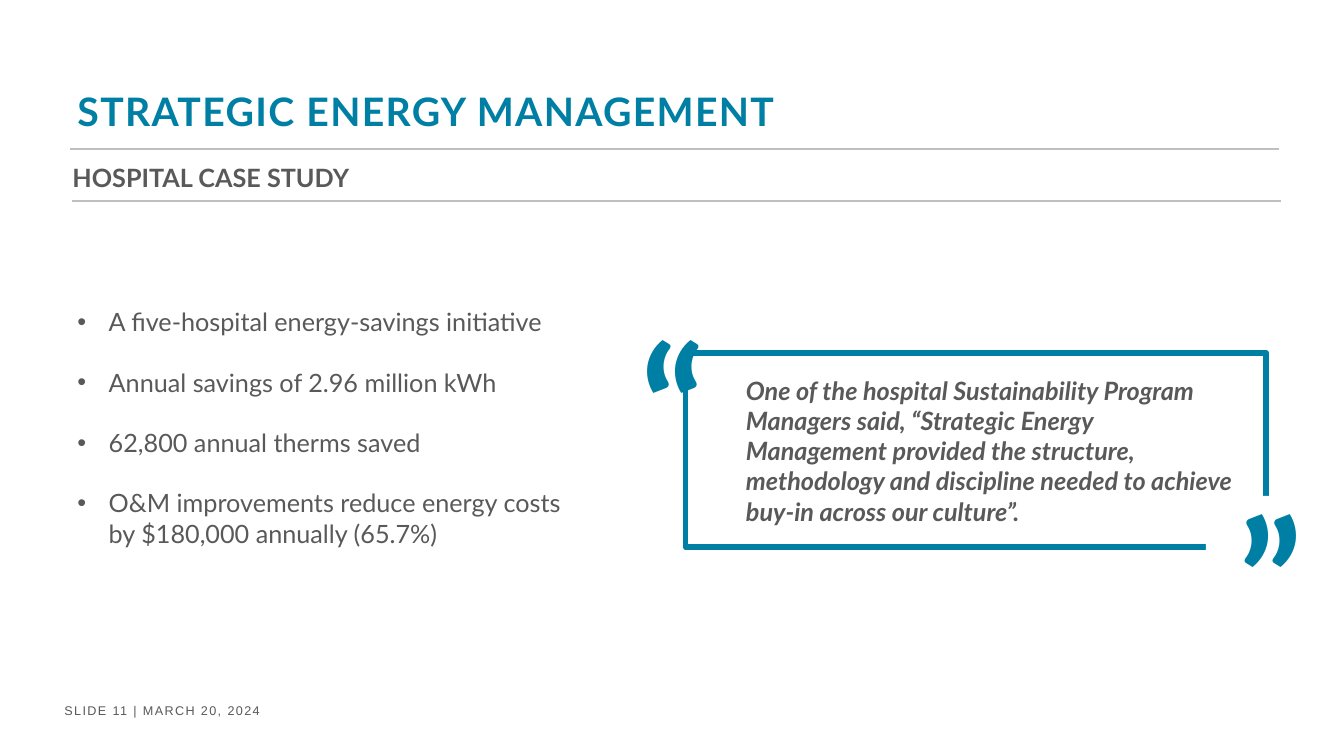
from dataclasses import dataclass

import pptx
import pptx.dml.color
import pptx.enum.shapes
import pptx.enum.text
import pptx.oxml.ns
import pptx.shapes.autoshape
import pptx.slide
import pptx.util
from lxml import etree

PX = 9144  # EMU per px, 100 px to the inch
TEAL = pptx.dml.color.RGBColor(0x00, 0x7F, 0xA4)
GRAY = pptx.dml.color.RGBColor(0x59, 0x59, 0x59)
RULE_GRAY = pptx.dml.color.RGBColor(0xBF, 0xBF, 0xBF)
WHITE = pptx.dml.color.RGBColor(0xFF, 0xFF, 0xFF)
BULLET_INDENT = 31
BULLET_GAP = pptx.util.Pt(21.6)

FOOTER = {"name": "Arial", "size": pptx.util.Pt(9)}
BODY = {"name": "Lato", "size": pptx.util.Pt(18)}
SUBTITLE = BODY | {"bold": True}
QUOTE = SUBTITLE | {"italic": True}
TITLE = SUBTITLE | {"size": pptx.util.Pt(28)}
QUOTE_MARK = SUBTITLE | {"size": pptx.util.Pt(120)}


@dataclass(frozen=True)
class Rule:
    left: int
    top: int
    width: int = 1200


@dataclass(frozen=True)
class TextBlock:
    box: tuple[int, int, int, int]
    lines: tuple[str, ...]
    font_format: dict
    color: pptx.dml.color.RGBColor = GRAY
    spacing: int = 0  # hundredths of a point
    middle: bool = False
    bulleted: bool = False
    rotation: int = 0


RULES = (Rule(69, 148), Rule(71, 199))

TEXT_BLOCKS = (
    TextBlock((54, 692, 590, 25), ("SLIDE 11 | MARCH 20, 2024",), FOOTER, spacing=100),
    TextBlock((67, 81, 1215, 58), ("STRATEGIC ENERGY MANAGEMENT",), TITLE, TEAL,
              spacing=100, middle=True),
    TextBlock((67, 299, 502, 313), (
        "A five-hospital energy-savings initiative",
        "Annual savings of 2.96 million kWh",
        "62,800 annual therms saved",
        "O&M improvements reduce energy costs by $180,000 annually (65.7%)",
    ), BODY, bulleted=True),
    TextBlock((62, 156, 771, 40), ("HOSPITAL CASE STUDY",), SUBTITLE),
    TextBlock((730, 367, 502, 222), (
        "One of the hospital Sustainability Program Managers said, “Strategic Energy "
        "Management provided the structure, methodology and discipline needed to "
        "achieve buy-in across our culture”.",
    ), QUOTE),
)

QUOTE_MARKS = (
    TextBlock((625, 296, 142, 212), ("“",), QUOTE_MARK, TEAL),
    TextBlock((1161, 393, 142, 212), ("“",), QUOTE_MARK, TEAL, rotation=180),
)


def emu(*lengths: int) -> list[int]:
    return [length * PX for length in lengths]


def draw_rule(slide: pptx.slide.Slide, rule: Rule) -> None:
    divider = slide.shapes.add_connector(
        pptx.enum.shapes.MSO_CONNECTOR.STRAIGHT,
        *emu(rule.left, rule.top, rule.left + rule.width, rule.top))
    divider.line.color.rgb = RULE_GRAY
    divider.line.width = pptx.util.Pt(1.5)
    etree.SubElement(divider._element.spPr, pptx.oxml.ns.qn("a:effectLst"))


def draw_text(slide: pptx.slide.Slide, block: TextBlock) -> None:
    text_box = slide.shapes.add_textbox(*emu(*block.box))
    text_box.rotation = block.rotation
    frame = text_box.text_frame
    frame.word_wrap = True
    if block.middle:
        frame.vertical_anchor = pptx.enum.text.MSO_ANCHOR.MIDDLE
    for index, line in enumerate(block.lines):
        paragraph = frame.add_paragraph() if index else frame.paragraphs[0]
        if index:
            paragraph.space_before = BULLET_GAP
        if block.bulleted:
            properties = paragraph._p.get_or_add_pPr()
            properties.set("marL", str(BULLET_INDENT * PX))
            properties.set("indent", str(-BULLET_INDENT * PX))
            etree.SubElement(properties, pptx.oxml.ns.qn("a:buFont"), typeface="Arial")
            etree.SubElement(properties, pptx.oxml.ns.qn("a:buChar"), char="•")
        run = paragraph.add_run()
        run.text = line
        for attribute, value in block.font_format.items():
            setattr(run.font, attribute, value)
        run.font.color.rgb = block.color
        if block.spacing:
            run._r.get_or_add_rPr().set("spc", str(block.spacing))


def draw_rectangle(slide: pptx.slide.Slide, *box: int) -> pptx.shapes.autoshape.Shape:
    rectangle = slide.shapes.add_shape(
        pptx.enum.shapes.MSO_SHAPE.RECTANGLE, *emu(*box))
    rectangle.shadow.inherit = False
    return rectangle


def main() -> None:
    presentation = pptx.Presentation()
    presentation.slide_width, presentation.slide_height = emu(1333, 750)
    slide = presentation.slides.add_slide(presentation.slide_layouts[6])

    # Header rules, headings, bullets and quotation
    for rule in RULES:
        draw_rule(slide, rule)
    for block in TEXT_BLOCKS:
        draw_text(slide, block)

    # Quote frame with rounded joins
    quote_frame = draw_rectangle(slide, 680, 350, 576, 193)
    quote_frame.fill.background()
    quote_frame.line.color.rgb = TEAL
    quote_frame.line.width = pptx.util.Pt(4)
    etree.SubElement(quote_frame.line._get_or_add_ln(), pptx.oxml.ns.qn("a:round"))

    # Opening in the frame's lower right corner
    corner_gap = draw_rectangle(slide, 1196, 492, 75, 83)
    corner_gap.fill.solid()
    corner_gap.fill.fore_color.rgb = WHITE
    corner_gap.line.fill.background()

    # Large quotation marks
    for mark in QUOTE_MARKS:
        draw_text(slide, mark)

    presentation.save("out.pptx")


if __name__ == "__main__":
    main()
